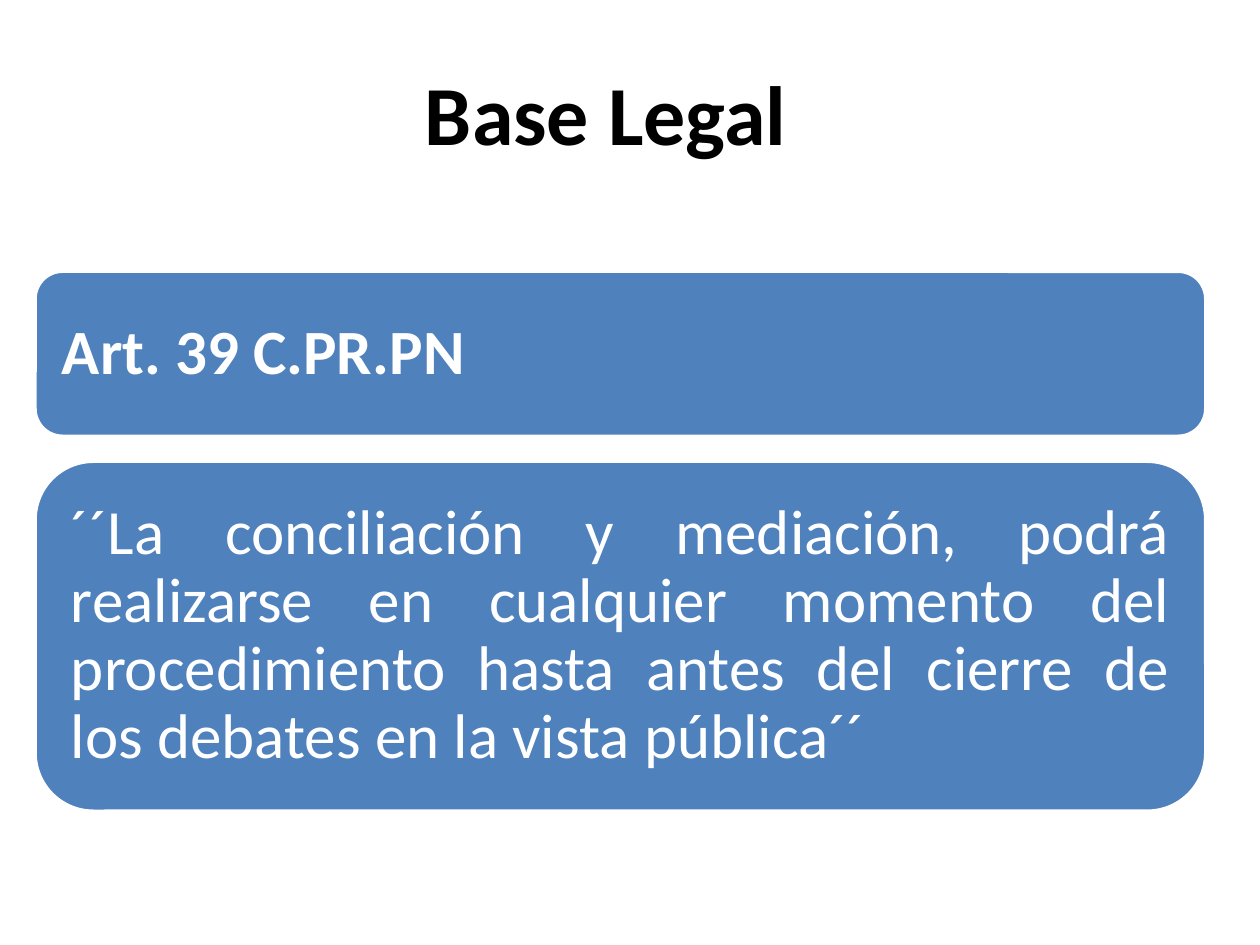
from dataclasses import dataclass

from pptx import Presentation
from pptx.dml.color import RGBColor as RGB
from pptx.enum.shapes import MSO_SHAPE as Shape
from pptx.enum.text import MSO_ANCHOR as Anchor, PP_ALIGN as Align
from pptx.util import Pt


@dataclass(frozen=True)
class Theme:
    font: str = "Calibri"
    ink: RGB = RGB(0, 0, 0)
    paper: RGB = RGB(255, 255, 255)
    blue: RGB = RGB(0x4F, 0x81, 0xBD)
    head: int = 48
    body: int = 36


class Deck:
    def __init__(self, slide, theme):
        self.slide = slide
        self.theme = theme

    def label(self, frame, text, size, color, bold, align):
        frame.word_wrap = True
        frame.text = text
        para = frame.paragraphs[0]
        para.alignment = align
        font = para.font
        font.name, font.size, font.bold = self.theme.font, Pt(size), bold
        font.color.rgb = color
        return para

    def title(self, text, left, top, width, height):
        box = self.slide.shapes.title
        box.left, box.top = Pt(left), Pt(top)
        box.width, box.height = Pt(width), Pt(height)
        frame = box.text_frame
        frame.vertical_anchor = Anchor.TOP
        self.label(frame, text, self.theme.head, self.theme.ink, True, Align.CENTER)

    def card(self, text, left, top, width, height, bold=False, align=Align.LEFT):
        box = self.slide.shapes.add_shape(
            Shape.ROUNDED_RECTANGLE, Pt(left), Pt(top), Pt(width), Pt(height))
        box.shadow.inherit = False
        box.fill.solid()
        box.fill.fore_color.rgb = self.theme.blue
        box.line.color.rgb = self.theme.paper
        box.line.width = Pt(2)
        frame = box.text_frame
        frame.vertical_anchor = Anchor.MIDDLE
        frame.margin_left = frame.margin_right = Pt(10.8)
        frame.margin_top = frame.margin_bottom = Pt(10.8)
        para = self.label(frame, text, self.theme.body, self.theme.paper, bold, align)
        para.line_spacing = 0.9


def main():
    prs = Presentation()
    prs.slide_width, prs.slide_height = Pt(720), Pt(540)
    deck = Deck(prs.slides.add_slide(prs.slide_layouts[5]), Theme())

    # Heading
    left, width = 20, 669
    deck.title("Base Legal", left, 31.7, 652.3, 65.5)

    # Article and its wording, stacked
    top, high, gap = 155, 94.3, 14.3
    deck.card("Art. 39 C.PR.PN", left, top, width, high, bold=True)
    deck.card(
        "´´La conciliación y mediación, podrá realizarse en cualquier momento "
        "del procedimiento hasta antes del cierre de los debates en la vista "
        "pública´´",
        left, top + high + gap, width, 200, align=Align.JUSTIFY)

    prs.save("out.pptx")


if __name__ == "__main__":
    main()
